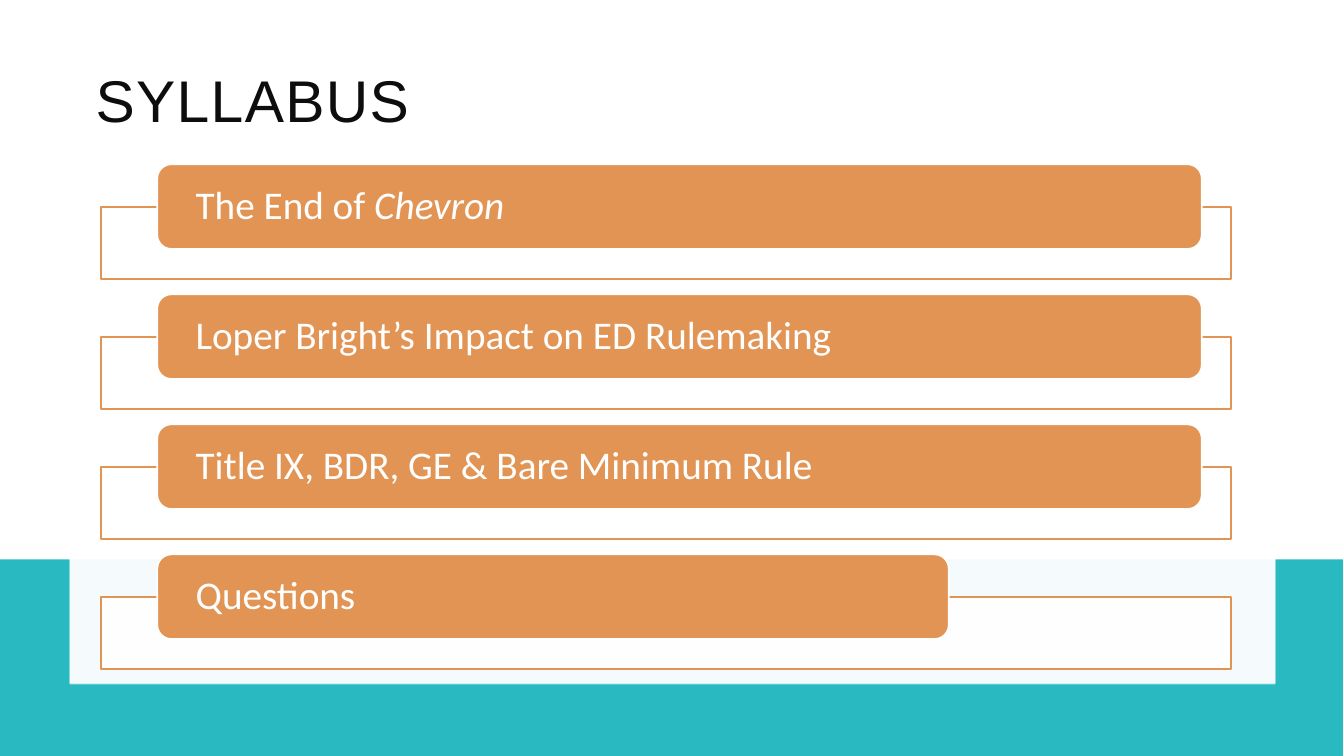
from dataclasses import dataclass

from lxml import etree
from pptx import Presentation
from pptx.dml.color import RGBColor
from pptx.enum.shapes import MSO_SHAPE
from pptx.enum.text import MSO_ANCHOR, PP_ALIGN
from pptx.oxml.ns import qn
from pptx.util import Inches, Pt

RECTANGLE = MSO_SHAPE.RECTANGLE
ROUNDED = MSO_SHAPE.ROUNDED_RECTANGLE
MIDDLE = MSO_ANCHOR.MIDDLE
LEFT = PP_ALIGN.LEFT


@dataclass(frozen=True)
class Theme:
    """Colours, fonts and type sizes of the slide."""
    white: str = "FFFFFF"
    teal: str = "00ACB4"
    orange: str = "E29454"
    ink: str = "0D0D0D"
    title_font: str = "Arial"
    body_font: str = "Calibri"
    title_size: int = 42
    topic_size: int = 28
    line_width: float = 1.25


THEME = Theme()
TOPICS = [
    ([("The End of ", False), ("Chevron", True)], 10.36),
    ([("Loper Bright’s Impact on ED Rulemaking", False)], 10.36),
    ([("Title IX, BDR, GE & Bare Minimum Rule", False)], 10.36),
    ([("Questions", False)], 7.85),
]


def add_box(slide, kind, box, fill, opacity=100, line=None):
    """Add a filled shape in a box of inches and return it."""
    shape = slide.shapes.add_shape(kind, *(Inches(length) for length in box))
    shape.shadow.inherit = False
    shape.fill.solid()
    shape.fill.fore_color.rgb = RGBColor.from_string(fill)
    if opacity < 100:
        color = shape.fill._xPr.find(qn("a:solidFill"))[0]
        etree.SubElement(color, qn("a:alpha"), val=str(opacity * 1000))
    if line:
        shape.line.color.rgb = RGBColor.from_string(line)
        shape.line.width = Pt(THEME.line_width)
    else:
        shape.line.fill.background()
    return shape


def write_line(shape, runs, font_name, size, color, inset):
    """Write one left-aligned, vertically centred paragraph of runs."""
    frame = shape.text_frame
    frame.word_wrap = True
    frame.vertical_anchor = MIDDLE
    frame.margin_left = frame.margin_right = Inches(inset)
    frame.margin_top = frame.margin_bottom = 0
    paragraph = frame.paragraphs[0]
    paragraph.alignment = LEFT
    paragraph.line_spacing = 0.9
    for text, italic in runs:
        run = paragraph.add_run()
        run.text = text
        run.font.name = font_name
        run.font.size = Pt(size)
        run.font.color.rgb = RGBColor.from_string(color)
        if italic:
            run.font.italic = True
    return paragraph


def add_backdrop(slide):
    """Add the teal band and the translucent white panels over it."""
    add_box(slide, RECTANGLE, (-0.01, 5.55, 13.33, 1.97), THEME.teal, 84)
    add_box(slide, RECTANGLE, (0.69, 0.36, 11.96, 6.42), THEME.white, 86)
    add_box(slide, RECTANGLE, (0.69, 1.49, 11.96, 5.3), THEME.white, 69)


def add_title(slide, box, text):
    """Add the letter-spaced slide title."""
    title = slide.shapes.add_textbox(*(Inches(length) for length in box))
    paragraph = write_line(title, [(text, False)], THEME.title_font,
                           THEME.title_size, THEME.ink, 0.1)
    paragraph.runs[0].font._element.set("spc", "100")


def add_topic(slide, box, runs, label_width):
    """Add an outlined frame at the box bottom with a label across its top."""
    left, top, width, height = box
    add_box(slide, RECTANGLE, (left, top + 0.42, width, height - 0.42),
            THEME.white, 90, THEME.orange)
    label = add_box(slide, ROUNDED, (left + 0.56, top, label_width, 0.84),
                    THEME.orange, line=THEME.white)
    write_line(label, runs, THEME.body_font, THEME.topic_size, THEME.white, 0.34)


def add_topics(slide, box, topics):
    """Stack the topics at equal steps down the box."""
    left, top, width, height = box
    gap = 0.15
    topic_height = (height + gap) / len(topics) - gap
    for index, (runs, label_width) in enumerate(topics):
        topic_top = top + index * (topic_height + gap)
        add_topic(slide, (left, topic_top, width, topic_height), runs, label_width)


def main():
    """Build the syllabus slide and save it."""
    presentation = Presentation()
    presentation.slide_width = Inches(13.33)
    presentation.slide_height = Inches(7.5)
    slide = presentation.slides.add_slide(presentation.slide_layouts[6])
    add_backdrop(slide)
    add_title(slide, (0.85, 0.46, 11.64, 1.14), "SYLLABUS")
    add_topics(slide, (1, 1.63, 11.21, 5.01), TOPICS)
    presentation.save("out.pptx")


if __name__ == "__main__":
    main()
